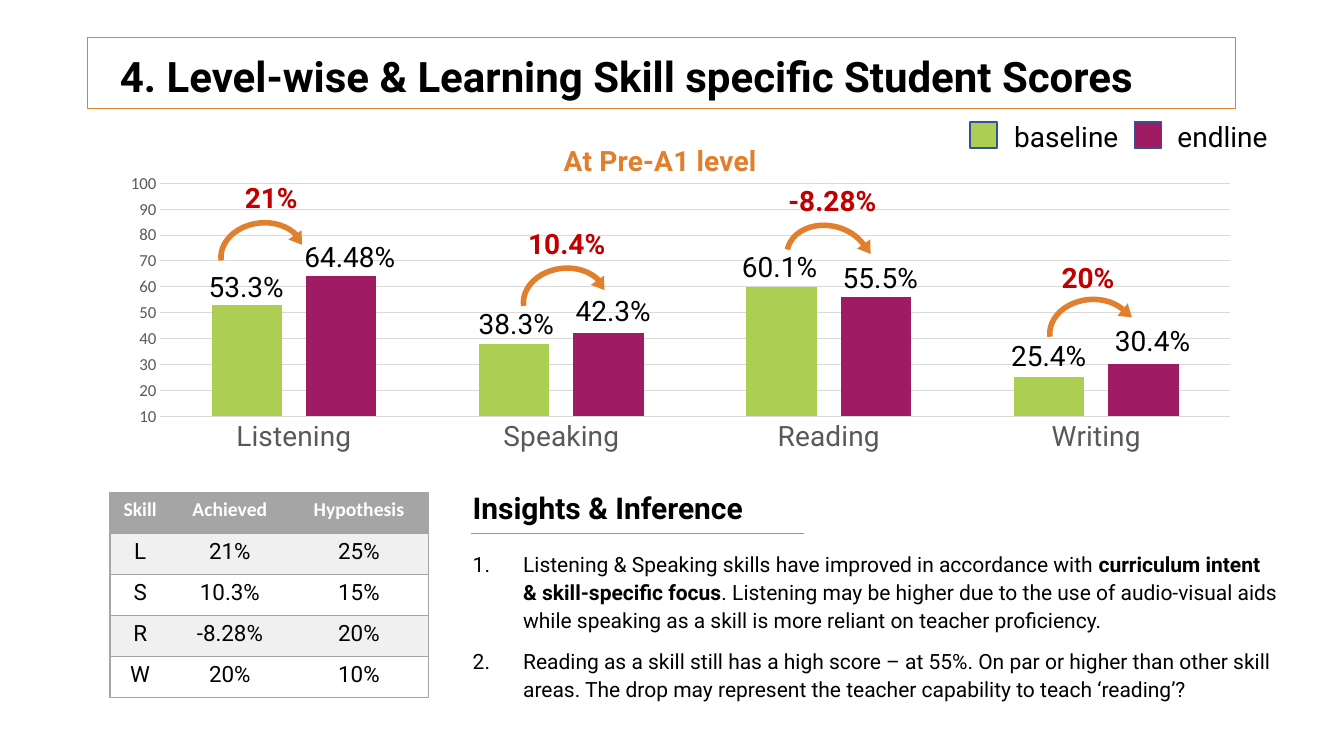
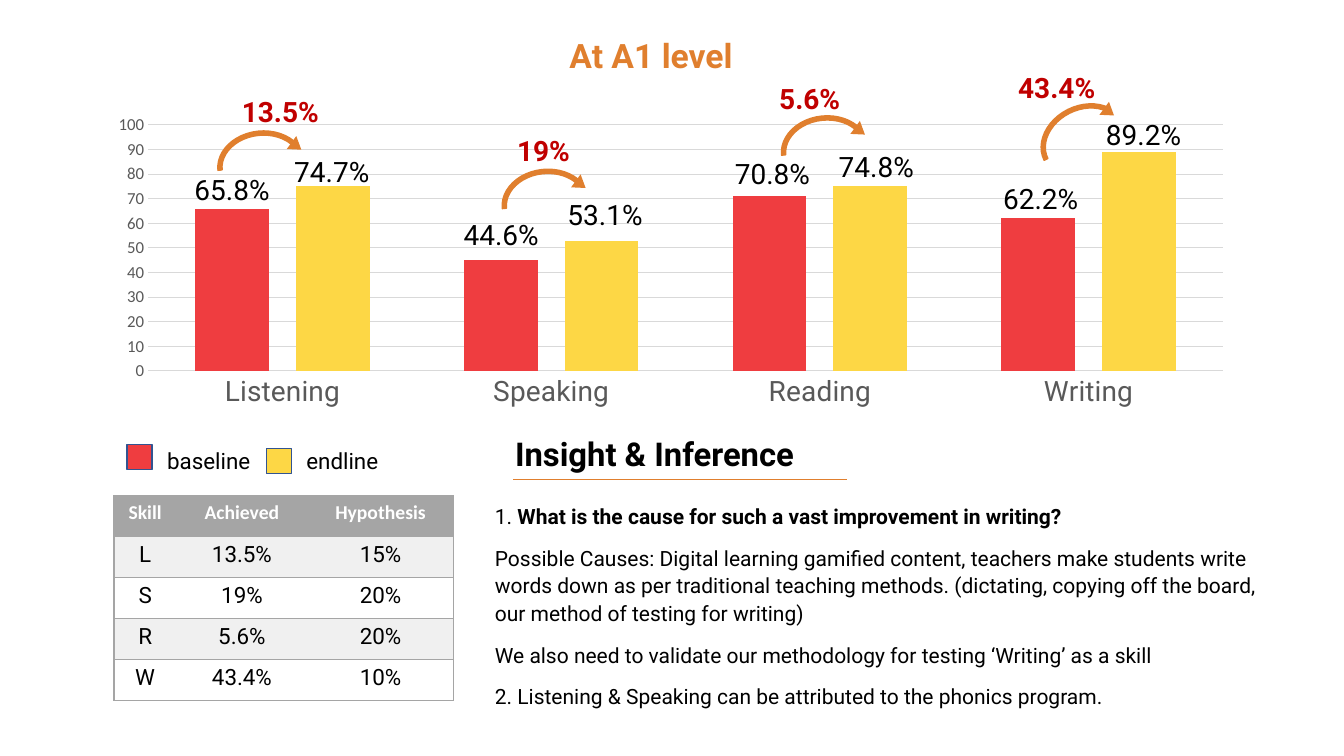
from pptx import Presentation
from pptx.chart.data import CategoryChartData
from pptx.dml.color import RGBColor
from pptx.enum.chart import XL_CHART_TYPE, XL_TICK_MARK
from pptx.enum.shapes import MSO_CONNECTOR, MSO_SHAPE
from pptx.enum.text import MSO_ANCHOR, PP_ALIGN
from pptx.oxml import parse_xml
from pptx.oxml.ns import nsdecls, qn
from pptx.util import Pt

PX = 9144
ORANGE, RED, BLACK, WHITE = "E07F2E", "C00000", "000000", "FFFFFF"
GREY, PALE, GRID, AXIS, NAVY = "A5A5A5", "F0F0F0", "D9D9D9", "595959", "325491"
BODY, NUMBERS = "Roboto", "Calibri"
SKILLS = ["Listening", "Speaking", "Reading", "Writing"]
rgb = RGBColor.from_string


def write(text, frame=None, slide=None, box=None, size=20, color=BLACK, bold=False,
          font=BODY, align=PP_ALIGN.LEFT, anchor=MSO_ANCHOR.TOP, spacing=None,
          before=0, numbered=False):
    if frame is None:
        frame = slide.shapes.add_textbox(*[value * PX for value in box]).text_frame
        frame.word_wrap = True
        frame.vertical_anchor = anchor
    for index, line in enumerate(text.split("\n")):
        paragraph = frame.add_paragraph() if index else frame.paragraphs[0]
        paragraph.alignment = align
        paragraph.line_spacing = spacing
        paragraph.space_before = Pt(before)
        if numbered:
            properties = paragraph._p.get_or_add_pPr()
            properties.set("marL", str(50 * PX))
            properties.set("indent", str(-50 * PX))
            properties.append(parse_xml(f'<a:buAutoNum {nsdecls("a")} type="arabicPeriod"/>'))
        for position, part in enumerate(line.split("**")):
            if part:
                run = paragraph.add_run()
                run.text = part
                run.font.name = font
                run.font.size = Pt(size)
                run.font.bold = bold or position % 2 == 1
                run.font.color.rgb = rgb(color)


def add_figure(slide, kind, box, fill=None, line=None, weight=1, rotation=0):
    shape = slide.shapes.add_shape(kind, *[value * PX for value in box])
    shape.shadow.inherit = False
    shape.rotation = rotation
    if fill:
        shape.fill.solid()
        shape.fill.fore_color.rgb = rgb(fill)
    else:
        shape.fill.background()
    if line:
        shape.line.color.rgb = rgb(line)
        shape.line.width = Pt(weight)
    else:
        shape.line.fill.background()
    return shape


pages = [
    {
        "chart": (87, 103, 1138, 357), "plot": (72, 79, 1061, 231),
        "chart_title": "At Pre-A1 level", "minimum": 10, "gap": 146, "overlap": -34,
        "series": [("baseline", "ABCE53", (53, 38, 60, 25)),
                   ("endline", "9F1C65", (64, 42, 56, 30))],
        "keys": [(962, 121, 27, 26), (1125, 121, 27, 26)],
        "key_labels": [(996, 114, 160, 44), (1158, 114, 137, 44)], "key_size": 20,
        "labels": [("53.3%", 197, 262), ("64.48%", 292, 233), ("38.3%", 465, 299),
                   ("42.3%", 561, 286), ("60.1%", 726, 243), ("55.5%", 826, 254),
                   ("25.4%", 993, 331), ("30.4%", 1096, 316)],
        "changes": [("21%", 233, 174), ("10.4%", 514, 220),
                    ("-8.28%", 772, 177), ("20%", 1043, 254)],
        "arcs": [(217, 219, 354.1), (517, 264, 354.1), (778, 222, 13.3), (1039, 295, 354.6)],
        "tips": [(288, 232, 145.2), (588, 277, 145.2), (852, 241, 145.2), (1110, 305, 129.6)],
        "table": (109, 489), "columns": (60, 118, 138),
        "rows": [("L", "21%", "25%"), ("S", "10.3%", "15%"),
                 ("R", "-8.28%", "20%"), ("W", "20%", "10%")],
        "heading": "Insights & Inference", "heading_box": (459, 469, 317, 74),
        "heading_size": 21.4, "underline": (467, 797, 529),
        "insight_box": (459, 540, 818, 146), "numbered": True,
        "insights": "Listening & Speaking skills have improved in accordance with "
                    "**curriculum intent & skill-specific focus**. Listening may be higher "
                    "due to the use of audio-visual aids while speaking as a skill is more "
                    "reliant on teacher proficiency.\n"
                    "Reading as a skill still has a high score – at 55%. On par or higher "
                    "than other skill areas. The drop may represent the teacher capability "
                    "to teach ‘reading’?",
    },
    {
        "chart": (95, 109, 1140, 303), "plot": (52, 15, 1066, 244),
        "chart_title": None, "minimum": 0, "gap": 128, "overlap": -37,
        "series": [("baseline", "EF3D40", (66, 45, 71, 62)),
                   ("endline", "FDD745", (75, 53, 75, 89))],
        "keys": [(126, 441, 25, 25), (264, 445, 25, 25)],
        "key_labels": [(156, 439, 142, 37), (294, 439, 165, 37)], "key_size": 16,
        "labels": [("65.8%", 183, 166), ("74.7%", 282, 148), ("44.6%", 450, 211),
                   ("53.1%", 553, 191), ("70.8%", 719, 150), ("74.8%", 822, 143),
                   ("62.2%", 985, 175), ("89.2%", 1087, 112)],
        "changes": [("13.5%", 230, 89), ("19%", 503, 128),
                    ("5.6%", 763, 76), ("43.4%", 1000, 65)],
        "arcs": [(216, 130, 354.1), (498, 168, 354.1), (775, 115, 354.1), (1031, 105, 333.3)],
        "tips": [(286, 139, 126.2), (568, 177, 126.2), (845, 124, 126.2), (1092, 105, 126.1)],
        "table": (113, 492), "columns": (62, 130, 145),
        "rows": [("L", "13.5%", "15%"), ("S", "19%", "20%"),
                 ("R", "5.6%", "20%"), ("W", "43.4%", "10%")],
        "heading": "Insight & Inference", "heading_box": (501, 415, 317, 74),
        "heading_size": 23.4, "underline": (509, 840, 476),
        "insight_box": (481, 492, 805, 146), "numbered": False,
        "insights": "1. **What is the cause for such a vast improvement in writing?**\n"
                    "Possible Causes: Digital learning gamified content, teachers make "
                    "students write words down as per traditional teaching methods. "
                    "(dictating, copying off the board, our method of testing for writing)\n"
                    "We also need to validate our methodology for testing ‘Writing’ as a skill\n"
                    "2. Listening & Speaking can be attributed to the phonics program.",
    },
]

presentation = Presentation()
presentation.slide_width = 1333 * PX
presentation.slide_height = 750 * PX
slides = [presentation.slides.add_slide(presentation.slide_layouts[6]) for page in pages]

add_figure(slides[0], MSO_SHAPE.RECTANGLE, (87, 37, 1138, 71), line=ORANGE, weight=0.75)
write("4. Level-wise & Learning Skill specific Student Scores", slide=slides[0],
      box=(109, 33, 1095, 90), size=30, bold=True, anchor=MSO_ANCHOR.MIDDLE, spacing=0.9)
write("At A1 level", slide=slides[1], box=(555, 30, 297, 44), size=24, color=ORANGE,
      bold=True, before=10)

for slide, page in zip(slides, pages):
    data = CategoryChartData()
    data.categories = SKILLS
    for name, color, values in page["series"]:
        data.add_series(name, values)
    chart = slide.shapes.add_chart(XL_CHART_TYPE.COLUMN_CLUSTERED,
                                   *[value * PX for value in page["chart"]], data).chart
    chart.font.name = NUMBERS
    chart.font.size = Pt(10)
    chart.has_legend = False
    chart.has_title = bool(page["chart_title"])
    layouts = [(chart.element.find(".//" + qn("c:plotArea")), 0, page["plot"])]
    if chart.has_title:
        write(page["chart_title"], frame=chart.chart_title.text_frame, color=ORANGE, bold=True)
        layouts.append((chart.chart_title.element, 1, (467, 33)))
    for parent, index, lengths in layouts:
        for layout in parent.findall(qn("c:layout")):
            parent.remove(layout)
        target = '<c:layoutTarget val="inner"/>' if len(lengths) == 4 else ""
        modes = '<c:xMode val="edge"/><c:yMode val="edge"/>'
        sides = "".join(f'<c:{side} val="{length / whole}"/>' for side, length, whole
                        in zip("xywh", lengths, page["chart"][2:] * 2))
        parent.insert(index, parse_xml(
            f'<c:layout {nsdecls("c")}><c:manualLayout>{target}{modes}{sides}'
            '</c:manualLayout></c:layout>'))

    plot = chart.plots[0]
    plot.gap_width = page["gap"]
    plot.overlap = page["overlap"]
    plot.vary_by_categories = False
    for series, (name, color, values) in zip(plot.series, page["series"]):
        series.format.fill.solid()
        series.format.fill.fore_color.rgb = rgb(color)
    for axis, font, size in [(chart.category_axis, BODY, 20), (chart.value_axis, NUMBERS, 12)]:
        axis.major_tick_mark = axis.minor_tick_mark = XL_TICK_MARK.NONE
        axis.tick_labels.font.name = font
        axis.tick_labels.font.size = Pt(size)
        axis.tick_labels.font.color.rgb = rgb(AXIS)
    value_axis = chart.value_axis
    value_axis.minimum_scale = page["minimum"]
    value_axis.maximum_scale = 100
    value_axis.major_unit = 10
    value_axis.format.line.fill.background()
    for line in (chart.category_axis.format.line, value_axis.major_gridlines.format.line):
        line.color.rgb = rgb(GRID)
        line.width = Pt(0.75)

    for (name, color, values), key, label in zip(page["series"], page["keys"], page["key_labels"]):
        add_figure(slide, MSO_SHAPE.RECTANGLE, key, fill=color, line=NAVY)
        write(name, slide=slide, box=label, size=page["key_size"])
    for text, left, top in page["labels"]:
        write(text, slide=slide, box=(left, top, 144, 44))
    for left, top, rotation in page["arcs"]:
        arc = add_figure(slide, MSO_SHAPE.BLOCK_ARC, (left, top, 87, 69), fill=ORANGE,
                         line=ORANGE, rotation=rotation)
        for index, adjustment in enumerate((108, 200.51, 0.06)):
            arc.adjustments[index] = adjustment
    for left, top, rotation in page["tips"]:
        add_figure(slide, MSO_SHAPE.ISOSCELES_TRIANGLE, (left, top, 16, 12), fill=ORANGE,
                   rotation=rotation)
    for text, left, top in page["changes"]:
        write(text, slide=slide, box=(left, top, 148, 44), color=RED, bold=True)

    rows = [("Skill", "Achieved", "Hypothesis")] + page["rows"]
    left, top = page["table"]
    table = slide.shapes.add_table(len(rows), 3, left * PX, top * PX,
                                   sum(page["columns"]) * PX, 203 * PX).table
    for column, width in zip(table.columns, page["columns"]):
        column.width = width * PX
    for row_index, row in enumerate(rows):
        header = row_index == 0
        for column_index, text in enumerate(row):
            cell = table.cell(row_index, column_index)
            write(text, frame=cell.text_frame, align=PP_ALIGN.CENTER, bold=header,
                  size=14 if header else 16, font=NUMBERS if header else BODY,
                  color=WHITE if header else BLACK)
            properties = cell._tc.get_or_add_tcPr()
            for side in "LRTB":
                inner = (side == "L" and column_index > 0) or (side == "R" and column_index < 2)
                paint = "<a:noFill/>" if inner else (
                    f'<a:solidFill><a:srgbClr val="{GREY}"/></a:solidFill>')
                properties.append(parse_xml(
                    f'<a:ln{side} {nsdecls("a")} w="12700">{paint}</a:ln{side}>'))
            cell.fill.solid()
            cell.fill.fore_color.rgb = rgb(GREY if header else PALE if row_index % 2 else WHITE)

    write(page["insights"], slide=slide, box=page["insight_box"], size=15, spacing=1.1,
          before=10, numbered=page["numbered"])
    write(page["heading"], slide=slide, box=page["heading_box"], size=page["heading_size"],
          bold=True, anchor=MSO_ANCHOR.MIDDLE, spacing=0.9)
    start, end, height = page["underline"]
    underline = slide.shapes.add_connector(MSO_CONNECTOR.STRAIGHT, start * PX, height * PX,
                                           end * PX, height * PX)
    underline.line.color.rgb = rgb(ORANGE)
    underline.line.width = Pt(1)
    underline._element.spPr.append(parse_xml(f'<a:effectLst {nsdecls("a")}/>'))

presentation.save("out.pptx")
